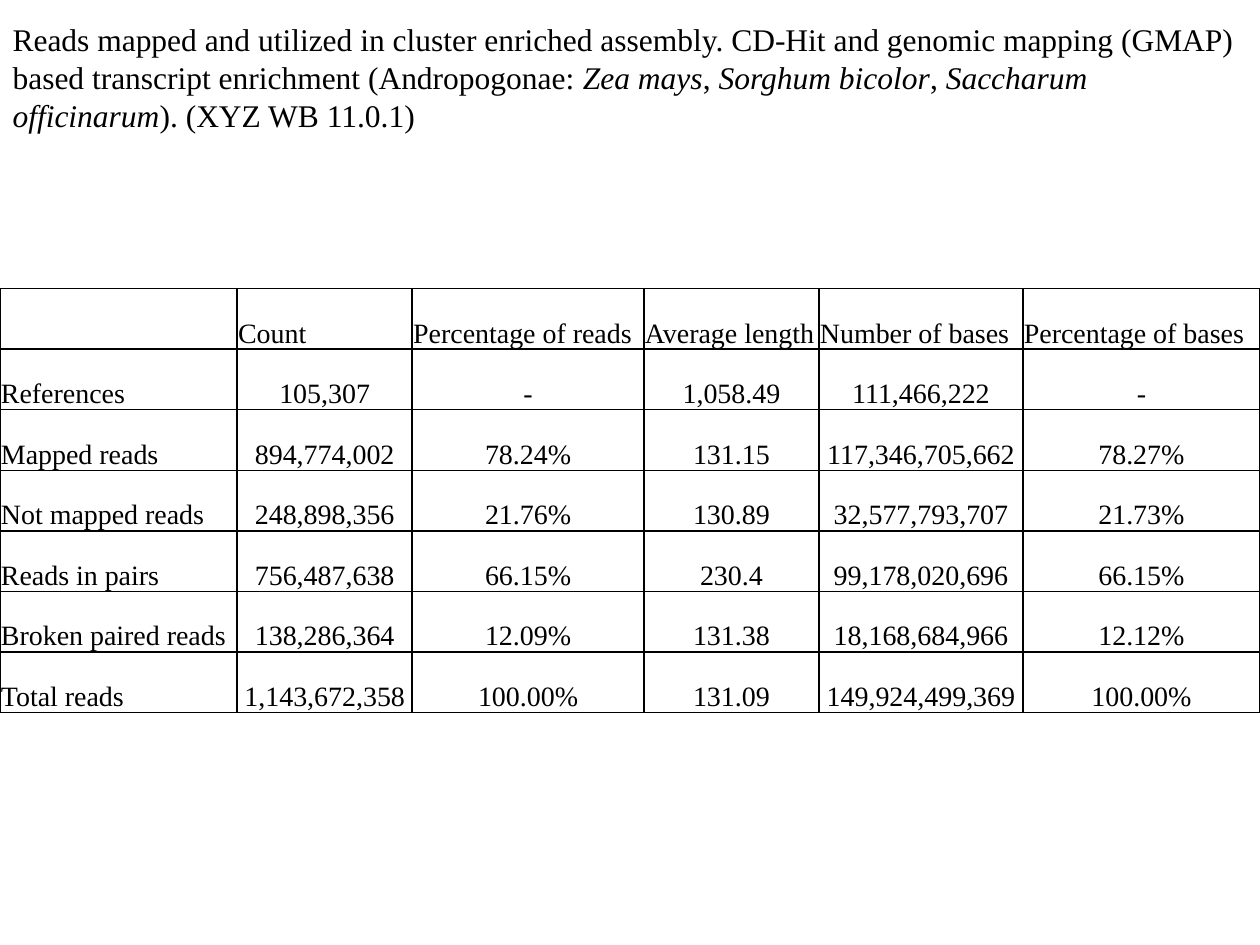
from lxml.etree import SubElement
from pptx import Presentation
from pptx.dml.color import RGBColor
from pptx.enum.text import MSO_ANCHOR, MSO_AUTO_SIZE, PP_ALIGN
from pptx.oxml.ns import qn
from pptx.util import Cm, Pt

BLACK = RGBColor(0x00, 0x00, 0x00)
WHITE = RGBColor(0xFF, 0xFF, 0xFF)

CAPTION = [
    ("Reads mapped and utilized in cluster enriched assembly. CD-Hit and genomic "
     "mapping (GMAP) based transcript enrichment (Andropogonae: ", False),
    ("Zea mays", True),
    (", ", False),
    ("Sorghum bicolor", True),
    (", ", False),
    ("Saccharum officinarum", True),
    ("). (XYZ WB 11.0.1)", False),
]
COLUMN_WIDTHS = [4.78, 3.53, 4.67, 3.53, 4.11, 4.78]
READ_STATISTICS = [
    ["", "Count", "Percentage of reads", "Average length", "Number of bases", "Percentage of bases"],
    ["References", "105,307", "-", "1,058.49", "111,466,222", "-"],
    ["Mapped reads", "894,774,002", "78.24%", "131.15", "117,346,705,662", "78.27%"],
    ["Not mapped reads", "248,898,356", "21.76%", "130.89", "32,577,793,707", "21.73%"],
    ["Reads in pairs", "756,487,638", "66.15%", "230.4", "99,178,020,696", "66.15%"],
    ["Broken paired reads", "138,286,364", "12.09%", "131.38", "18,168,684,966", "12.12%"],
    ["Total reads", "1,143,672,358", "100.00%", "131.09", "149,924,499,369", "100.00%"],
]


class ReadsSlide:
    """Hold the text style and the slide being filled."""

    def __init__(self, slide, font="Times New Roman", color=BLACK):
        self.slide = slide
        self.font = font
        self.color = color

    def style(self, run, size, italic=False):
        run.font.name = self.font
        run.font.size = Pt(size)
        run.font.italic = italic
        run.font.color.rgb = self.color

    def title(self, parts, left, top, width, height, size):
        title = self.slide.shapes.title
        title.left, title.top = Cm(left), Cm(top)
        title.width, title.height = Cm(width), Cm(height)
        frame = title.text_frame
        frame.word_wrap = True
        frame.auto_size = MSO_AUTO_SIZE.NONE
        frame.vertical_anchor = MSO_ANCHOR.TOP
        paragraph = frame.paragraphs[0]
        paragraph.alignment = PP_ALIGN.LEFT
        for words, italic in parts:
            run = paragraph.add_run()
            run.text = words
            self.style(run, size, italic)

    def border(self, cell, width):
        properties = cell._tc.get_or_add_tcPr()
        for index, side in enumerate(("a:lnL", "a:lnR", "a:lnT", "a:lnB")):
            line = SubElement(properties, qn(side), w=str(Pt(width)))
            fill = SubElement(line, qn("a:solidFill"))
            SubElement(fill, qn("a:srgbClr"), val=str(self.color))
            properties.insert(index, line)

    def cell(self, cell, words, size, alignment):
        cell.fill.solid()
        cell.fill.fore_color.rgb = WHITE
        cell.vertical_anchor = MSO_ANCHOR.BOTTOM
        cell.margin_left = cell.margin_right = cell.margin_top = Cm(0.02)
        cell.margin_bottom = 0
        self.border(cell, 1)
        paragraph = cell.text_frame.paragraphs[0]
        paragraph.alignment = alignment
        if words:
            paragraph.text = words
            self.style(paragraph.runs[0], size)

    def table(self, rows, widths, left, top, row_height, size):
        table = self.slide.shapes.add_table(
            len(rows), len(widths), Cm(left), Cm(top),
            Cm(sum(widths)), Cm(row_height * len(rows))).table
        table.horz_banding = False
        table.first_row = False
        for column, width in zip(table.columns, widths):
            column.width = Cm(width)
        for r, values in enumerate(rows):
            table.rows[r].height = Cm(row_height)
            for c, words in enumerate(values):
                alignment = PP_ALIGN.CENTER if r and c else PP_ALIGN.LEFT
                self.cell(table.cell(r, c), words, size, alignment)


def main():
    presentation = Presentation()
    presentation.slide_width, presentation.slide_height = Cm(25.4), Cm(19.05)
    reads = ReadsSlide(presentation.slides.add_slide(presentation.slide_layouts[5]))
    reads.title(CAPTION, 0, 0.28, 25.4, 3.33, 18)
    reads.table(READ_STATISTICS, COLUMN_WIDTHS, 0, 5.82, 1.22, 16)
    presentation.save("out.pptx")


if __name__ == "__main__":
    main()
